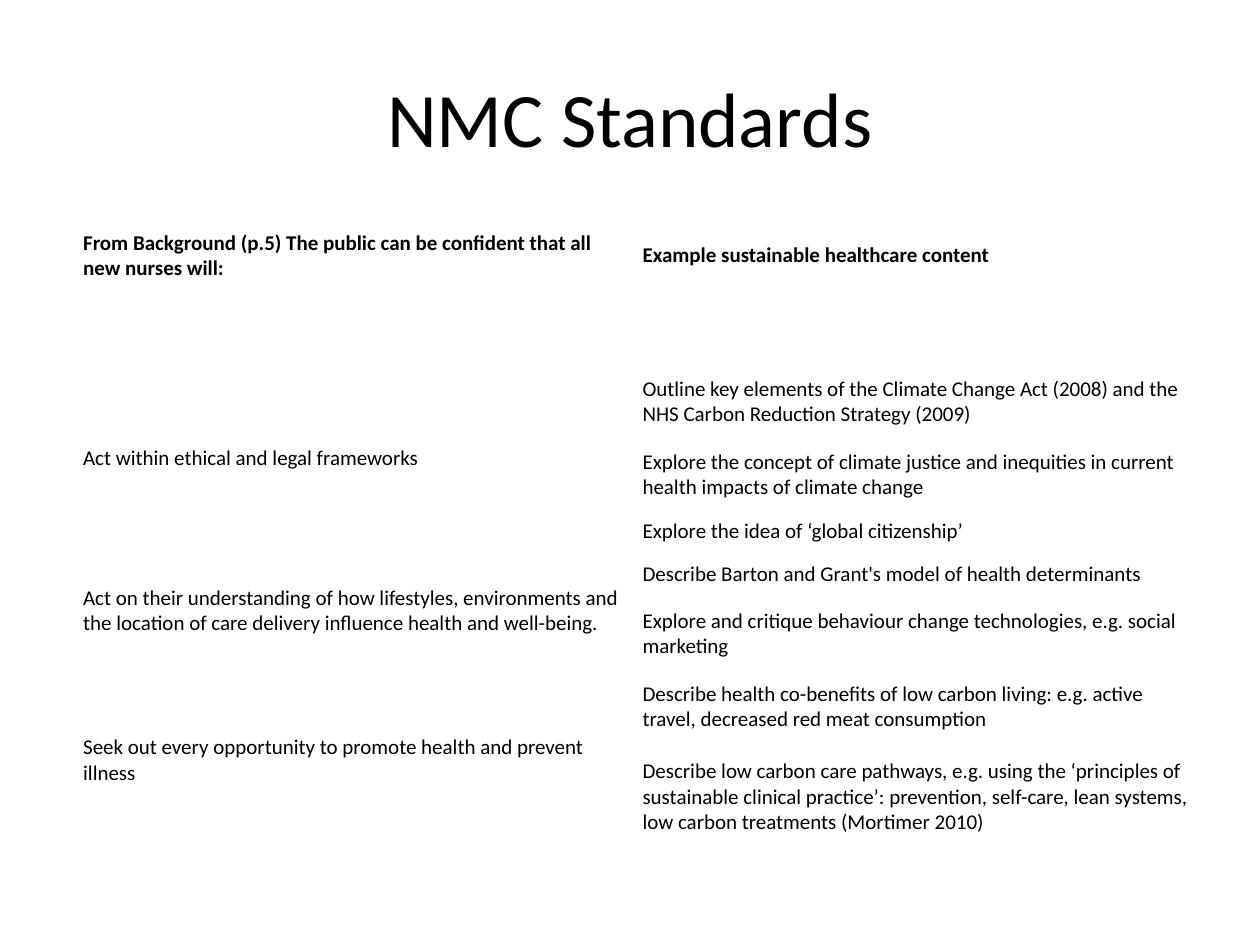
from pptx import Presentation
from pptx.dml.color import RGBColor
from pptx.enum.text import MSO_ANCHOR, PP_ALIGN
from pptx.util import Inches, Pt

MIDDLE = MSO_ANCHOR.MIDDLE
LEFT, CENTER = PP_ALIGN.LEFT, PP_ALIGN.CENTER

COLORS = {"text": "000000"}
TITLE = {"size": Pt(44), "bold": False}
HEAD = {"size": Pt(12), "bold": True}
BODY = {"size": Pt(12), "bold": False}
INSETS = {
    "margin_left": Inches(0.04), "margin_right": Inches(0.04),
    "margin_top": Inches(0.02), "margin_bottom": Inches(0.02),
    "vertical_anchor": MIDDLE,
}

HEADS = (
    "From Background (p.5) The public can be confident that all new nurses will:",
    "Example sustainable healthcare content",
)
# Each standard, then its (row height, example) pairs
GROUPS = [
    ("Act within ethical and legal frameworks", [
        (0.58, "Outline key elements of the Climate Change Act (2008) and the "
               "NHS Carbon Reduction Strategy (2009)"),
        (0.58, "Explore the concept of climate justice and inequities in current "
               "health impacts of climate change"),
        (0.32, "Explore the idea of ‘global citizenship’"),
    ]),
    ("Act on their understanding of how lifestyles, environments and the location "
     "of care delivery influence health and well-being.", [
         (0.36, "Describe Barton and Grant's model of health determinants"),
         (0.58, "Explore and critique behaviour change technologies, e.g. social "
                "marketing"),
     ]),
    ("Seek out every opportunity to promote health and prevent illness", [
        (0.58, "Describe health co-benefits of low carbon living: e.g. active "
               "travel, decreased red meat consumption"),
        (0.85, "Describe low carbon care pathways, e.g. using the ‘principles of "
               "sustainable clinical practice’: prevention, self-care, lean "
               "systems, low carbon treatments (Mortimer 2010)"),
    ]),
]


class Deck:
    """Holds the font and the current slide."""

    def __init__(self, slide, font="Calibri"):
        self.slide = slide
        self.font = font

    def label(self, frame, text, form, align=LEFT):
        para = frame.paragraphs[0]
        para.alignment = align
        run = para.add_run()
        run.text = text
        run.font.name = self.font
        run.font.color.rgb = RGBColor.from_string(COLORS["text"])
        for key, value in form.items():
            setattr(run.font, key, value)

    def title(self, text, left, top, width, height):
        box = self.slide.shapes.add_textbox(
            Inches(left), Inches(top), Inches(width), Inches(height))
        frame = box.text_frame
        frame.word_wrap = True
        frame.vertical_anchor = MIDDLE
        self.label(frame, text, TITLE, CENTER)

    def table(self, left, top, widths, heights):
        """Add an empty table without fills or banding."""
        grid = self.slide.shapes.add_table(
            len(heights), len(widths), Inches(left), Inches(top),
            Inches(sum(widths)), Inches(sum(heights))).table
        grid.first_row = grid.horz_banding = False
        for col, width in zip(grid.columns, widths):
            col.width = Inches(width)
        for row, height in zip(grid.rows, heights):
            row.height = Inches(height)
        for cell in grid.iter_cells():
            cell.fill.background()
            for key, value in INSETS.items():
                setattr(cell, key, value)
        return grid


def main():
    prs = Presentation()
    prs.slide_width, prs.slide_height = Inches(10), Inches(7.5)
    deck = Deck(prs.slides.add_slide(prs.slide_layouts[6]))
    deck.title("NMC Standards", 0.5, 0.3, 9, 1.25)

    heights = [0.58, 0.58] + [h for _, items in GROUPS for h, _ in items]
    grid = deck.table(0.62, 1.74, [4.44, 4.44], heights)
    for col, text in enumerate(HEADS):
        deck.label(grid.cell(0, col).text_frame, text, HEAD)
    grid.cell(1, 0).merge(grid.cell(1, 1))

    row = 2
    for name, items in GROUPS:
        first = grid.cell(row, 0)
        first.merge(grid.cell(row + len(items) - 1, 0))
        deck.label(first.text_frame, name, BODY)
        for _, text in items:
            deck.label(grid.cell(row, 1).text_frame, text, BODY)
            row += 1

    prs.save("out.pptx")


if __name__ == "__main__":
    main()
